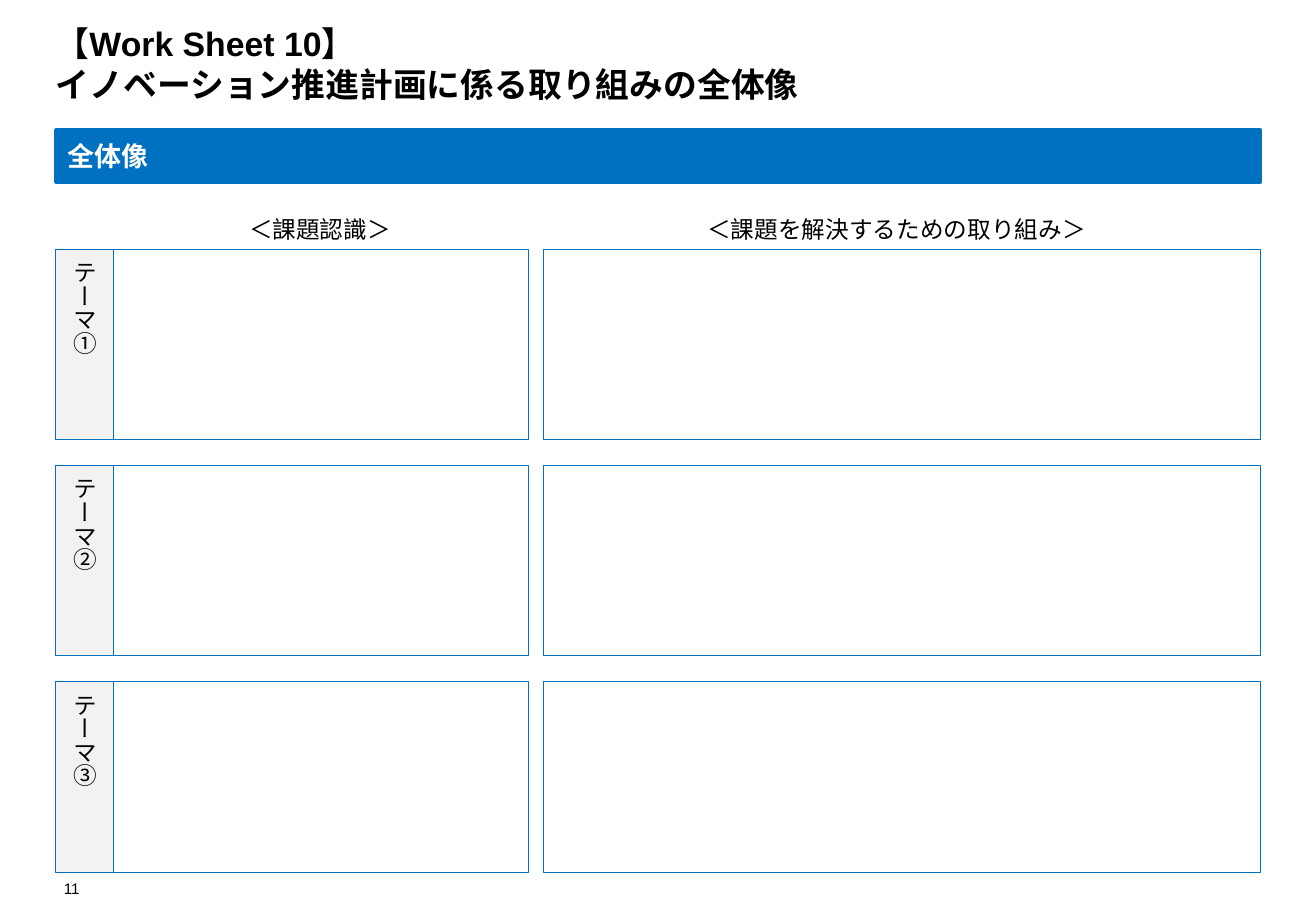
import pptx
import pptx.util
import pptx.dml.color
import pptx.enum.shapes
import pptx.enum.text
import pptx.oxml.ns
from lxml import etree

Pt = pptx.util.Pt
ALIGN = pptx.enum.text.PP_ALIGN
ANCHOR = pptx.enum.text.MSO_ANCHOR

TITLE = "【Work Sheet 10】\vイノベーション推進計画に係る取り組みの全体像"
BANNER = "全体像"
THEMES = ["テーマ①", "テーマ②", "テーマ③"]
# text, left, width
HEADINGS = [("＜課題認識＞", 140, 99.4), ("＜課題を解決するための取り組み＞", 411.2, 240.5)]
PAGE = "11"

COLORS = {"blue": "0070C0", "grey": "F2F2F2", "black": "000000", "white": "FFFFFF"}
LATIN, JAPANESE = "Arial", "Noto Sans CJK JP"

LEFT, WIDTH = 33, 714
LABEL_W, ISSUE_W, GAP = 34, 246, 8.7
ACTION_X = LEFT + LABEL_W + ISSUE_W + GAP
ACTION_W = LEFT + WIDTH - ACTION_X
ROW_TOP, ROW_H, ROW_PITCH = 147.5, 113, 128.2


def rgb(name):
    return pptx.dml.color.RGBColor.from_string(COLORS[name])


def write(s, text, size=14, font=LATIN, color="black", bold=False, align=ALIGN.LEFT,
          anchor=ANCHOR.TOP, inset=(7.2, 3.6, 7.2, 3.6), wrap=True, vertical=False):
    tf = s.text_frame
    tf.text = text
    tf.word_wrap = wrap
    tf.auto_size = pptx.enum.text.MSO_AUTO_SIZE.NONE
    tf.vertical_anchor = anchor
    tf.margin_left, tf.margin_top, tf.margin_right, tf.margin_bottom = map(Pt, inset)
    if vertical:
        tf._txBody.bodyPr.set("vert", "eaVert")
    p = tf.paragraphs[0]
    p.alignment = align
    for r in p.runs:
        r.font.size, r.font.bold, r.font.name = Pt(size), bold, font
        r.font.color.rgb = rgb(color)
        ea = etree.SubElement(r._r.get_or_add_rPr(), pptx.oxml.ns.qn("a:ea"))
        ea.set("typeface", font)
        r.font._element.find(pptx.oxml.ns.qn("a:latin")).addnext(ea)


def add_box(slide, x, y, w, h, fill=None, line=0.25):
    s = slide.shapes.add_shape(pptx.enum.shapes.MSO_SHAPE.RECTANGLE, Pt(x), Pt(y), Pt(w), Pt(h))
    s.shadow.inherit = False
    if fill:
        s.fill.solid()
        s.fill.fore_color.rgb = rgb(fill)
    else:
        s.fill.background()
    s.line.color.rgb = rgb("blue")
    s.line.width = Pt(line)
    return s


def add_text(slide, x, y, w, h, text, **style):
    write(slide.shapes.add_textbox(Pt(x), Pt(y), Pt(w), Pt(h)), text, **style)


def main():
    prs = pptx.Presentation()
    prs.slide_width, prs.slide_height = Pt(780), Pt(540)
    slide = prs.slides.add_slide(prs.slide_layouts[5])

    title = slide.shapes.title
    title.left, title.top, title.width, title.height = Pt(LEFT), Pt(10.8), Pt(WIDTH), Pt(51)
    write(title, TITLE, size=20, bold=True, anchor=ANCHOR.BOTTOM, inset=(0, 0, 0, 0))

    banner = add_box(slide, LEFT, 77, WIDTH, 31, fill="blue", line=2)
    write(banner, BANNER, size=16, font=JAPANESE, color="white", bold=True,
          anchor=ANCHOR.MIDDLE, inset=(7.2, 3.6, 5.8, 3.6))

    for text, x, w in HEADINGS:
        add_text(slide, x, 123.8, w, 24.2, text, font=JAPANESE, align=ALIGN.CENTER, wrap=False)

    for i, theme in enumerate(THEMES):
        y = ROW_TOP + i * ROW_PITCH
        add_box(slide, LEFT + LABEL_W, y, ISSUE_W, ROW_H)
        add_box(slide, ACTION_X, y, ACTION_W, ROW_H)
        label = add_box(slide, LEFT, y, LABEL_W, ROW_H, fill="grey")
        write(label, theme, anchor=ANCHOR.MIDDLE, vertical=True)

    add_text(slide, LEFT, 518.4, 14.2, 13.7, PAGE, size=9, align=ALIGN.RIGHT,
             anchor=ANCHOR.BOTTOM, inset=(0, 0, 0, 0), wrap=False)
    prs.save("out.pptx")


if __name__ == "__main__":
    main()
